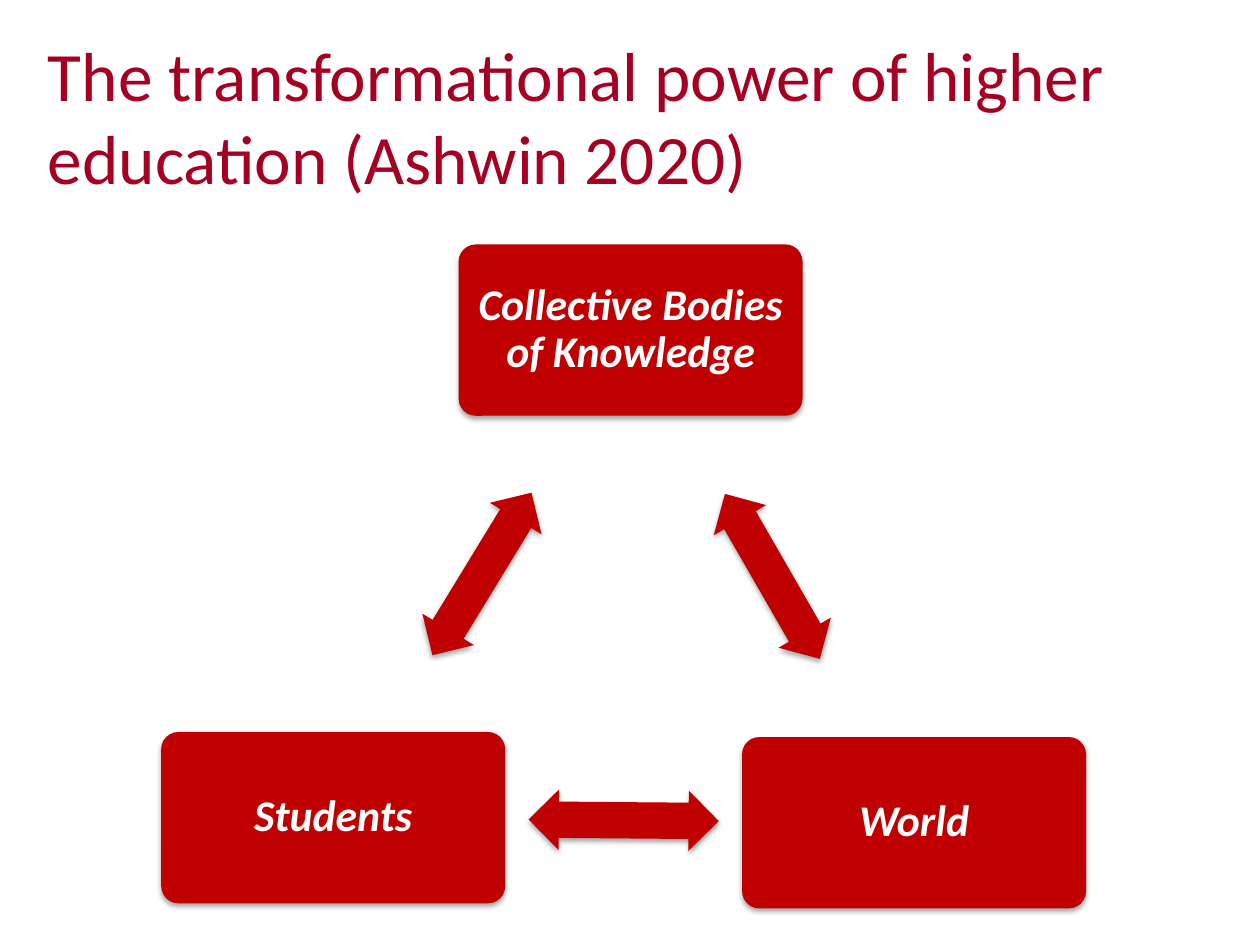
import math
from lxml import etree
from pptx import Presentation
from pptx.dml.color import RGBColor
from pptx.enum import shapes, text
from pptx.oxml import ns
from pptx.util import Inches, Pt

FONT = "Calibri"
RED, TITLE_RED, WHITE = "C00000", "A50021", "FFFFFF"
BOX_W, BOX_H = 2.73, 1.36
ARROW_W, ARROW_H = 1.51, 0.48


def color(hex_code):
    return RGBColor.from_string(hex_code)


def add_shadow(sp):
    """Give the shape a soft shadow falling straight down."""
    sp.shadow.inherit = False
    effects = sp._element.spPr.find(ns.qn("a:effectLst"))
    shadow = etree.SubElement(effects, ns.qn("a:outerShdw"), blurRad=str(Pt(3.1)),
                              dist=str(Pt(1.8)), dir="5400000", rotWithShape="0")
    black = etree.SubElement(shadow, ns.qn("a:srgbClr"), val="000000")
    etree.SubElement(black, ns.qn("a:alpha"), val="35000")


def add_red_shape(s, kind, center, size, adjustments):
    (cx, cy), (w, h) = center, size
    sp = s.shapes.add_shape(kind, Inches(cx - w / 2), Inches(cy - h / 2),
                            Inches(w), Inches(h))
    for i, value in enumerate(adjustments):
        sp.adjustments[i] = value
    sp.fill.solid()
    sp.fill.fore_color.rgb = color(RED)
    sp.line.fill.background()
    add_shadow(sp)
    return sp


def format_run(r, size, hex_code, emphasis=False):
    r.font.name, r.font.size = FONT, Pt(size)
    r.font.color.rgb = color(hex_code)
    r.font.bold = r.font.italic = emphasis


def add_title(s, left, top, width, height):
    title = s.shapes.title
    title.left, title.top = Inches(left), Inches(top)
    title.width, title.height = Inches(width), Inches(height)
    tf = title.text_frame
    tf.text = "The transformational power of higher education (Ashwin 2020)"
    tf.auto_size = text.MSO_AUTO_SIZE.NONE
    tf.vertical_anchor = text.MSO_ANCHOR.MIDDLE
    p = tf.paragraphs[0]
    p.alignment = text.PP_ALIGN.LEFT
    format_run(p.runs[0], 39.6, TITLE_RED)


def add_node(s, label, center):
    sp = add_red_shape(s, shapes.MSO_SHAPE.ROUNDED_RECTANGLE, center,
                       (BOX_W, BOX_H), [0.1])
    tf = sp.text_frame
    tf.text = label
    tf.word_wrap = True
    tf.vertical_anchor = text.MSO_ANCHOR.MIDDLE
    tf.margin_left = tf.margin_right = tf.margin_top = tf.margin_bottom = Inches(0.1)
    p = tf.paragraphs[0]
    p.alignment = text.PP_ALIGN.CENTER
    p.line_spacing = 0.9
    format_run(p.runs[0], 25, WHITE, emphasis=True)


def add_arrow(s, start, end):
    """Put a double arrow halfway between two nodes, turned along their line."""
    (x1, y1), (x2, y2) = start, end
    sp = add_red_shape(s, shapes.MSO_SHAPE.LEFT_RIGHT_ARROW,
                       ((x1 + x2) / 2, (y1 + y2) / 2), (ARROW_W, ARROW_H), [0.6, 0.5])
    sp.rotation = math.degrees(math.atan2(y2 - y1, x2 - x1)) % 360


def add_cycle(s, left, top, offsets):
    """Draw the nodes, offset from the diagram's corner, and link them in a ring."""
    centers = [(left + dx + BOX_W / 2, top + dy + BOX_H / 2)
               for dx, dy in offsets.values()]
    for label, center in zip(offsets, centers):
        add_node(s, label, center)
    for start, end in zip(centers, centers[1:] + centers[:1]):
        add_arrow(s, start, end)


def main():
    prs = Presentation()
    prs.slide_width, prs.slide_height = Inches(10), Inches(7.5)
    s = prs.slides.add_slide(prs.slide_layouts[5])  # title only
    add_title(s, 0.28, 0.29, 9.5, 1.25)
    add_cycle(s, 1.28, 1.94, {
        "Collective Bodies of Knowledge": (2.36, 0),
        "World": (4.61, 3.91),
        "Students": (0, 3.87),
    })
    prs.save("out.pptx")


if __name__ == "__main__":
    main()
